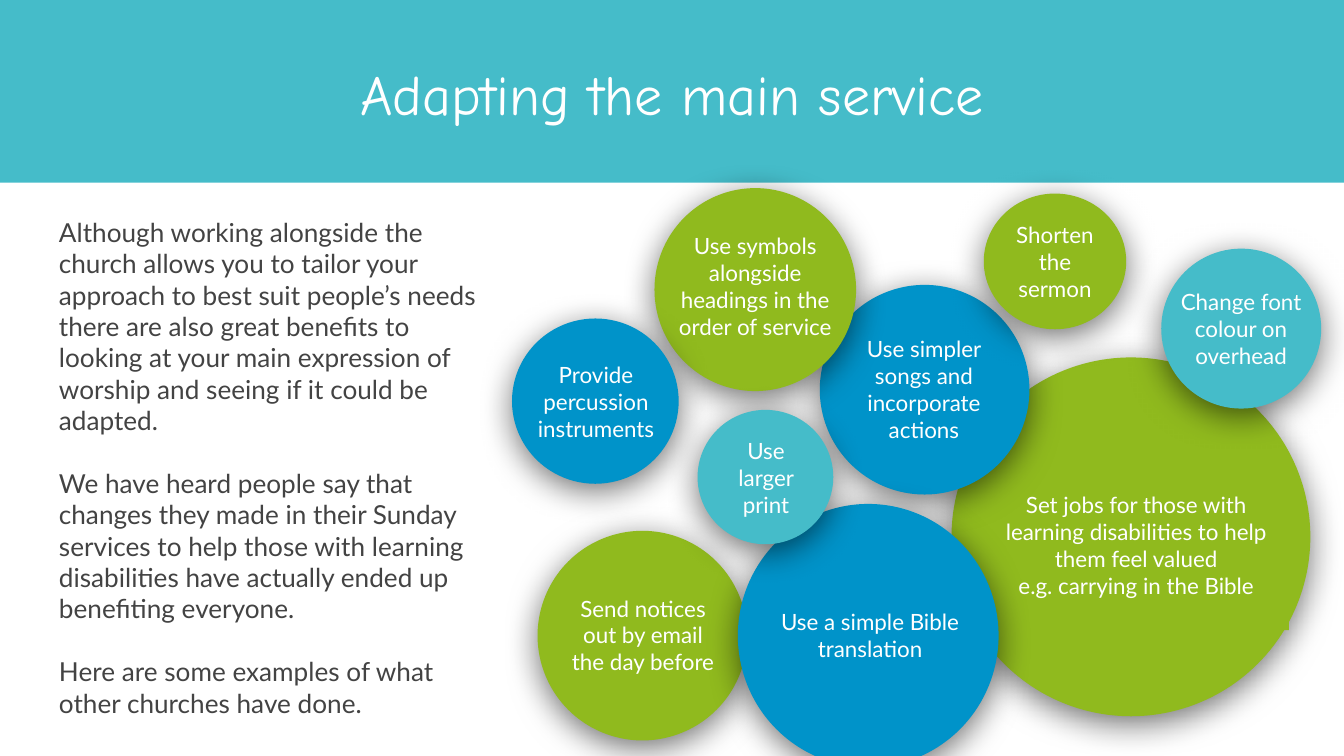
from dataclasses import dataclass

from lxml.etree import SubElement
from pptx import Presentation
from pptx.dml.color import RGBColor
from pptx.enum.shapes import MSO_SHAPE as Preset
from pptx.enum.text import MSO_ANCHOR as Anchor, MSO_AUTO_SIZE as AutoSize, PP_ALIGN as Align
from pptx.oxml.ns import qn
from pptx.util import Emu, Pt


@dataclass(frozen=True)
class Theme:
    teal: str = "45BCC9"
    blue: str = "0093C9"
    green: str = "90BA1E"
    white: str = "FFFFFF"
    grey: str = "434343"
    title_font: str = "Comic Neue"
    body_font: str = "Lato"
    title_size: int = 30
    body_size: int = 14
    bubble_size: int = 12


theme = Theme()
PX = 9144  # 100 px to the inch
INSET = 10


def px(*lengths):
    return [Emu(length * PX) for length in lengths]


def write(shape, paragraphs, font, size, color, align, anchor, gap=0):
    """Fill a text frame with paragraphs, set apart by gap points."""
    frame = shape.text_frame
    frame.text = "\n".join(paragraphs)
    frame.word_wrap = True
    frame.auto_size = AutoSize.NONE
    frame.vertical_anchor = anchor
    frame.margin_left, frame.margin_top, frame.margin_right, frame.margin_bottom = px(*[INSET] * 4)
    for index, paragraph in enumerate(frame.paragraphs):
        paragraph.alignment = align
        paragraph.line_spacing = 1.0
        paragraph.space_before = Pt(gap if index else 0)
        for run in paragraph.runs:
            run.font.name = font
            run.font.size = Pt(size)
            run.font.color.rgb = RGBColor.from_string(color)


presentation = Presentation()
presentation.slide_width = Emu(1000 * PX)
presentation.slide_height = Emu(1000 * PX * 9 // 16)
slide = presentation.slides.add_slide(presentation.slide_layouts[5])
slide.background.fill.solid()
slide.background.fill.fore_color.rgb = RGBColor.from_string(theme.teal)

# Title on the teal band
title = slide.shapes.title
title.left, title.top, title.width, title.height = px(0, 34, 1000, 53)
write(title, ["Adapting the main service"], theme.title_font, theme.title_size,
      theme.white, Align.CENTER, Anchor.TOP)

# White panel below the band
panel = slide.shapes.add_shape(Preset.RECTANGLE, *px(0, 136, 1000, 456))
panel.shadow.inherit = False
panel.fill.solid()
panel.fill.fore_color.rgb = RGBColor.from_string(theme.white)
panel.line.fill.background()

# Introduction on the left
introduction = slide.shapes.add_textbox(*px(34, 151, 345, 53))
write(introduction, [
    "Although working alongside the church allows you to tailor your approach to best suit "
    "people’s needs there are also great benefits to looking at your main expression of "
    "worship and seeing if it could be adapted.",
    "We have heard people say that changes they made in their Sunday services to help those "
    "with learning disabilities have actually ended up benefiting everyone.",
    "Here are some examples of what other churches have done.",
], theme.body_font, theme.body_size, theme.grey, Align.LEFT, Anchor.TOP, gap=16.8)

# Bubbles from back to front: colour, circle box, label box, paragraphs
bubbles = [
    (theme.green, (708, 266, 267, 267), (732, 342, 227, 127),
     ["Set jobs for those with learning disabilities to help them feel valued",
      "e.g. carrying in the Bible"]),
    (theme.blue, (610, 212, 156, 156), (615, 238, 145, 103),
     ["Use simpler songs and incorporate actions"]),
    (theme.green, (400, 395, 156, 156), (412, 421, 133, 103),
     ["Send notices out by email the day before"]),
    (theme.blue, (549, 375, 194, 196), (556, 411, 183, 123),
     ["Use a simple Bible translation"]),
    (theme.teal, (864, 185, 119, 119), (867, 205, 113, 79),
     ["Change font colour on overhead"]),
    (theme.green, (487, 140, 150, 151), (487, 163, 150, 100),
     ["Use symbols alongside headings in the order of service"]),
    (theme.blue, (381, 237, 124, 123), (385, 258, 117, 82),
     ["Provide percussion instruments"]),
    (theme.green, (732, 144, 106, 101), (735, 161, 100, 67),
     ["Shorten the sermon"]),
    (theme.teal, (519, 305, 101, 100), (533, 322, 74, 67),
     ["Use larger print"]),
]
for color, circle_box, label_box, paragraphs in bubbles:
    group = slide.shapes.add_group_shape()
    circle = group.shapes.add_shape(Preset.OVAL, *px(*circle_box))
    circle.fill.solid()
    circle.fill.fore_color.rgb = RGBColor.from_string(color)
    circle.line.fill.background()

    # Soft shadow straight below the circle
    circle.shadow.inherit = False
    effects = circle._element.spPr.find(qn("a:effectLst"))
    shadow = SubElement(effects, qn("a:outerShdw"), blurRad=str(Pt(18)), dist=str(Pt(4)),
                        dir=str(90 * 60000), algn="bl", rotWithShape="0")
    shadow_color = SubElement(shadow, qn("a:srgbClr"), val="000000")
    SubElement(shadow_color, qn("a:alpha"), val="55000")

    label = group.shapes.add_textbox(*px(*label_box))
    write(label, paragraphs, theme.body_font, theme.bubble_size, theme.white,
          Align.CENTER, Anchor.MIDDLE)
    # The two-paragraph label has its own filled box
    if len(paragraphs) > 1:
        label.fill.solid()
        label.fill.fore_color.rgb = RGBColor.from_string(color)

presentation.save("out.pptx")
